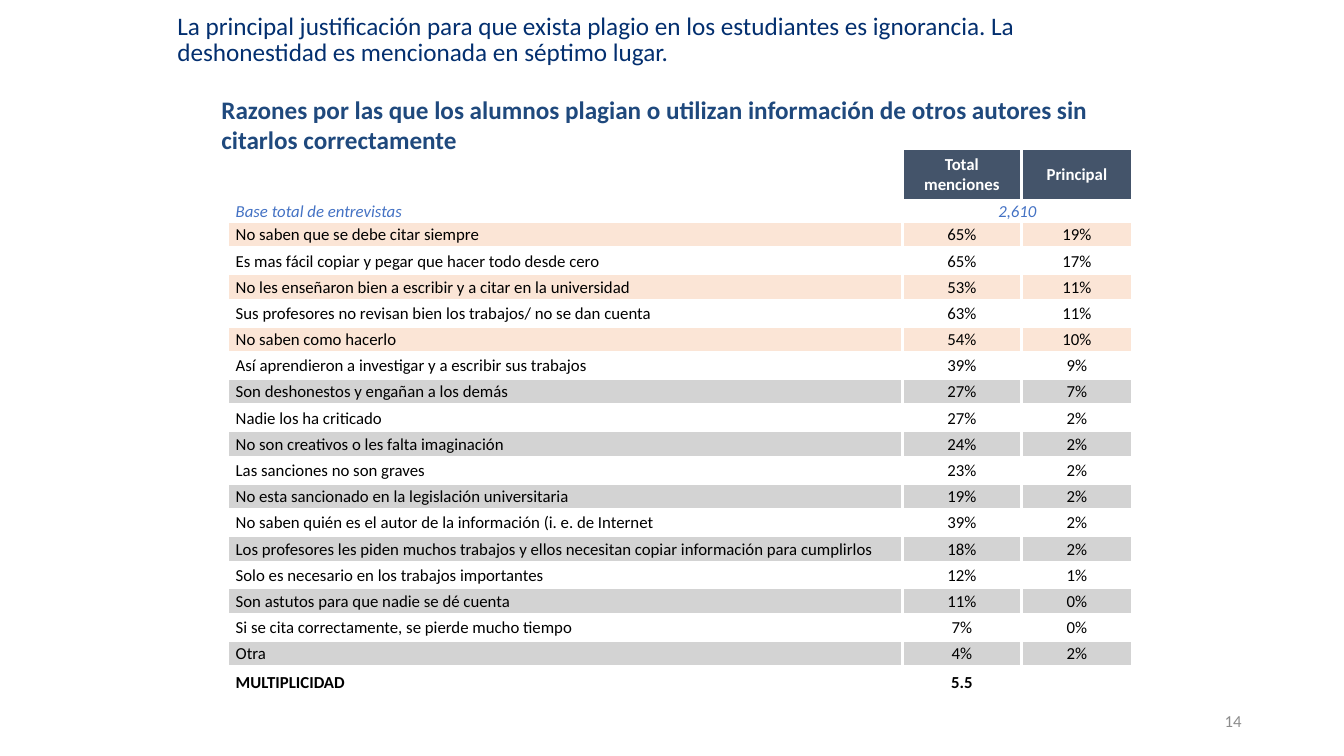
from lxml.etree import SubElement
from pptx import Presentation
from pptx.dml.color import RGBColor
from pptx.enum.text import MSO_ANCHOR as Anchor, PP_ALIGN as Align
from pptx.oxml.ns import qn
from pptx.util import Cm, Pt

COLORS = {"navy": "032F6F", "blue": "1F497D", "base": "4472C4", "slate": "44546A",
          "peach": "FBE5D6", "gray": "D3D3D3", "white": "FFFFFF", "black": "000000",
          "number": "8C8C8C"}
TITLE = ("La principal justificación para que exista plagio en los estudiantes es ignorancia. "
         "La deshonestidad es mencionada en séptimo lugar.")
SUBTITLE = ("Razones por las que los alumnos plagian o utilizan información de otros autores "
            "sin citarlos correctamente")
PAGE_NUMBER = "14"
HEADER = ("", "Total\nmenciones", "Principal")
BASE = ("Base total de entrevistas", "2,610", "")
REASONS = [
    ("No saben que se debe citar siempre", "65%", "19%"),
    ("Es mas fácil copiar y pegar que hacer todo desde cero", "65%", "17%"),
    ("No les enseñaron bien a escribir y a citar en la universidad", "53%", "11%"),
    ("Sus profesores no revisan bien los trabajos/ no se dan cuenta", "63%", "11%"),
    ("No saben como hacerlo", "54%", "10%"),
    ("Así aprendieron a investigar y a escribir sus trabajos", "39%", "9%"),
    ("Son deshonestos y engañan a los demás", "27%", "7%"),
    ("Nadie los ha criticado", "27%", "2%"),
    ("No son creativos o les falta imaginación", "24%", "2%"),
    ("Las sanciones no son graves", "23%", "2%"),
    ("No esta sancionado en la legislación universitaria", "19%", "2%"),
    ("No saben quién es el autor de la información (i. e. de Internet", "39%", "2%"),
    ("Los profesores les piden muchos trabajos y ellos necesitan copiar información "
     "para cumplirlos", "18%", "2%"),
    ("Solo es necesario en los trabajos importantes", "12%", "1%"),
    ("Son astutos para que nadie se dé cuenta", "11%", "0%"),
    ("Si se cita correctamente, se pierde mucho tiempo", "7%", "0%"),
    ("Otra", "4%", "2%"),
]
TOTAL = ("MULTIPLICIDAD", "5.5", "")
HIGHLIGHTED = 5
COLUMN_WIDTHS = (17, 3, 2.8)
HEADER_HEIGHT, BASE_HEIGHT, ROW_HEIGHT = 1.3, 0.3, 0.66


def apply(target, formats):
    for name, value in formats.items():
        setattr(target, name, value)


def write(frame, text, color, size=12, bold=False, italic=False, **para_format):
    for index, line in enumerate(text.split("\n")):
        para = frame.add_paragraph() if index else frame.paragraphs[0]
        apply(para, para_format)
        span = para.add_run()
        span.text = line
        apply(span.font, {"name": "Calibri", "size": Pt(size), "bold": bold, "italic": italic})
        span.font.color.rgb = RGBColor.from_string(COLORS[color])


def add_text(page, place, text, color, frame_format, **text_format):
    box = page.shapes.add_textbox(*map(Cm, place))
    apply(box.text_frame, {"word_wrap": True, **frame_format})
    write(box.text_frame, text, color, **text_format)


def add_borders(cell):
    properties = cell._tc.get_or_add_tcPr()
    for side in ("a:lnL", "a:lnR", "a:lnT", "a:lnB"):
        line = SubElement(properties, qn(side), w=str(Pt(2.25)))
        fill = SubElement(line, qn("a:solidFill"))
        SubElement(fill, qn("a:srgbClr"), val=COLORS["white"])


def fill_cell(cell, text, column, fill, color, **text_format):
    apply(cell, {"vertical_anchor": Anchor.MIDDLE, "margin_left": Cm(0.03 if column else 0.2),
                 "margin_right": Cm(0.03), "margin_top": Cm(0.03), "margin_bottom": 0})
    add_borders(cell)
    if fill:
        cell.fill.solid()
        cell.fill.fore_color.rgb = RGBColor.from_string(COLORS[fill])
    else:
        cell.fill.background()
    write(cell.text_frame, text, color, alignment=Align.CENTER if column else Align.LEFT,
          **text_format)


def reason_fill(index):
    if index % 2:
        return None
    return "peach" if index < HIGHLIGHTED else "gray"


def add_reasons_table(page):
    rows = [(HEADER, "slate", {"color": "white", "bold": True}),
            (BASE, None, {"color": "base", "italic": True})]
    rows += [(reason, reason_fill(index), {"color": "black"})
             for index, reason in enumerate(REASONS)]
    rows.append((TOTAL, None, {"color": "black", "bold": True}))
    heights = [HEADER_HEIGHT, BASE_HEIGHT] + [ROW_HEIGHT] * (len(rows) - 2)
    table = page.shapes.add_table(len(rows), len(COLUMN_WIDTHS), Cm(5.74), Cm(3.74),
                                  Cm(sum(COLUMN_WIDTHS)), Cm(sum(heights))).table
    apply(table, {"first_row": False, "horz_banding": False})
    for column, width in zip(table.columns, COLUMN_WIDTHS):
        column.width = Cm(width)
    table.cell(1, 1).merge(table.cell(1, 2))
    for row, (texts, fill, text_format) in enumerate(rows):
        table.rows[row].height = Cm(heights[row])
        for column, text in enumerate(texts):
            cell_fill = fill if row or column else None
            fill_cell(table.cell(row, column), text, column, cell_fill, **text_format)


def main():
    """Build the slide on the reasons for plagiarism."""
    deck = Presentation()
    apply(deck, {"slide_width": Cm(33.87), "slide_height": Cm(19.05)})
    page = deck.slides.add_slide(deck.slide_layouts[6])
    middle = {"vertical_anchor": Anchor.MIDDLE}
    add_text(page, (23.92, 17.66, 7.62, 1.01), PAGE_NUMBER, "number", middle,
             alignment=Align.RIGHT)
    add_reasons_table(page)
    add_text(page, (5.33, 2.24, 22.6, 1.8), SUBTITLE, "blue", {}, size=18, bold=True)
    add_text(page, (4.22, -0.03, 25.37, 2.13), TITLE, "navy",
             {**middle, "margin_right": Cm(1.2)}, size=18, line_spacing=Pt(18))
    deck.save("out.pptx")


if __name__ == "__main__":
    main()
